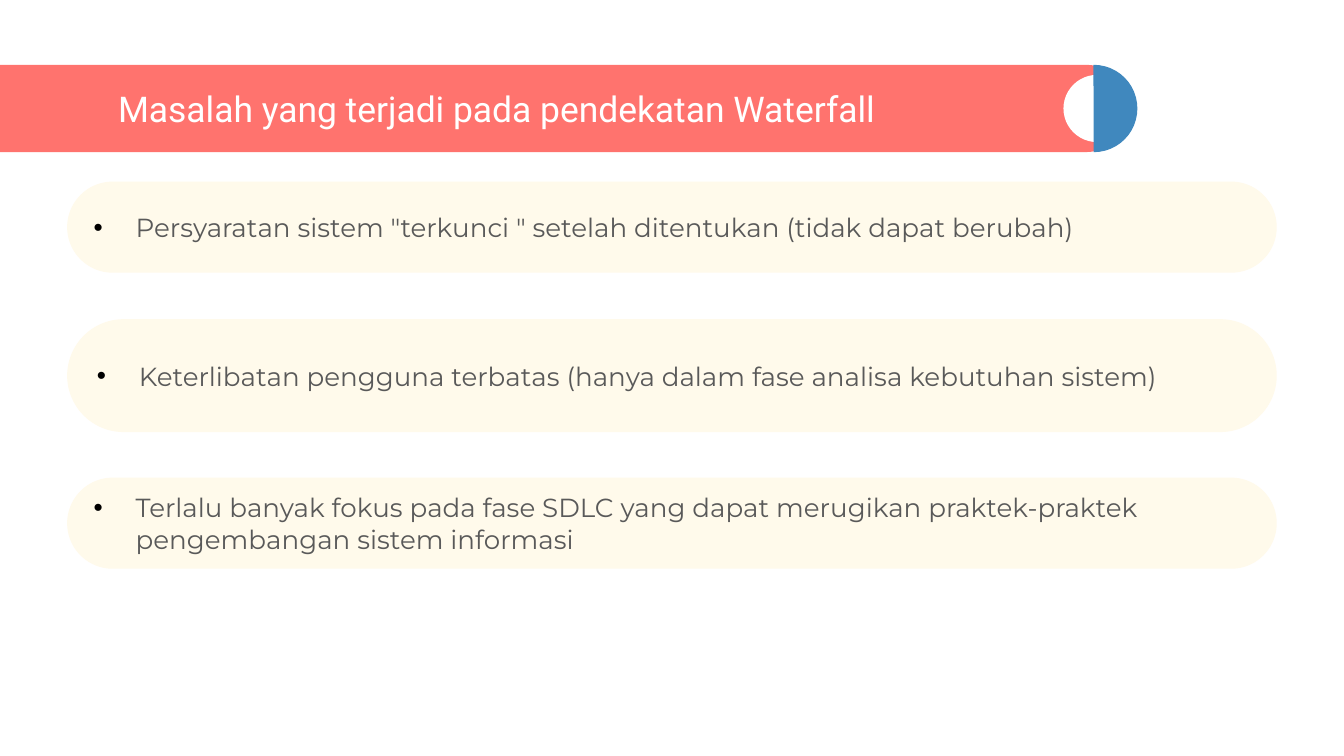
from lxml.etree import SubElement
from pptx import Presentation
from pptx.dml.color import RGBColor
from pptx.enum.shapes import MSO_SHAPE as Preset
from pptx.enum.text import MSO_ANCHOR as Anchor, PP_ALIGN as Align
from pptx.oxml.ns import qn
from pptx.util import Pt

COLORS = {
    "coral": "FF736E",
    "blue": "4088BE",
    "cream": "FFFAEB",
    "white": "FFFFFF",
    "gray": "595959",
    "black": "000000",
}

deck = Presentation()
deck.slide_width, deck.slide_height = Pt(720), Pt(405)
page = deck.slides.add_slide(deck.slide_layouts[6])


def add_shape(preset, left, top, width, height, color):
    shape = page.shapes.add_shape(preset, Pt(left), Pt(top), Pt(width), Pt(height))
    shape.shadow.inherit = False
    shape.fill.solid()
    shape.fill.fore_color.rgb = RGBColor.from_string(COLORS[color])
    shape.line.fill.background()
    return shape


def write(box, text, font, size, color):
    frame = box.text_frame
    frame.word_wrap = True
    frame.vertical_anchor = Anchor.MIDDLE
    frame.margin_left = frame.margin_right = Pt(7.2)
    frame.margin_top = frame.margin_bottom = Pt(7.2)
    para = frame.paragraphs[0]
    para.alignment = Align.LEFT
    span = para.add_run()
    span.text = text
    span.font.name = font
    span.font.size = Pt(size)
    span.font.color.rgb = RGBColor.from_string(COLORS[color])
    return para


# Title banner, running in from the left edge
banner = add_shape(Preset.ROUNDED_RECTANGLE, -23, 34.7, 628, 46.8, "coral")
banner.adjustments[0] = 0.5

# Two-tone knob at the banner's end
knob = add_shape(Preset.OVAL, 569.7, 40.1, 36, 36, "white")
knob.rotation = 180
half = add_shape(Preset.PIE, 562.5, 34.7, 46.8, 46.8, "blue")
half.rotation = 180
half.adjustments[0] = 53.67  # angles, in units of 5/3 degree
half.adjustments[1] = 162

# Title
title = page.shapes.add_textbox(Pt(56.2), Pt(43.2), Pt(501.8), Pt(29.5))
write(title, "Masalah yang terjadi pada pendekatan Waterfall", "Roboto", 19, "white")

# Problem cards: top, height, text
problems = [
    (97.3, 48.8, 'Persyaratan sistem "terkunci " setelah ditentukan (tidak dapat berubah)'),
    (171, 60.5, "Keterlibatan pengguna terbatas (hanya dalam fase analisa kebutuhan sistem)"),
    (255.9, 48.8, "Terlalu banyak fokus pada fase SDLC yang dapat merugikan "
                  "praktek-praktek pengembangan sistem informasi"),
]
for top, height, text in problems:
    card = add_shape(Preset.ROUNDED_RECTANGLE, 36, top, 648, height, "cream")
    card.adjustments[0] = 0.5
    para = write(card, text, "Montserrat", 14, "gray")

    # Black bullet with a hanging indent
    props = para._p.get_or_add_pPr()
    props.set("marL", str(Pt(22.5)))
    props.set("indent", str(-Pt(22.5)))
    bullet_color = SubElement(props, qn("a:buClr"))
    SubElement(bullet_color, qn("a:srgbClr"), val=COLORS["black"])
    SubElement(props, qn("a:buFont"), typeface="Arial")
    SubElement(props, qn("a:buChar"), char="•")

deck.save("out.pptx")
